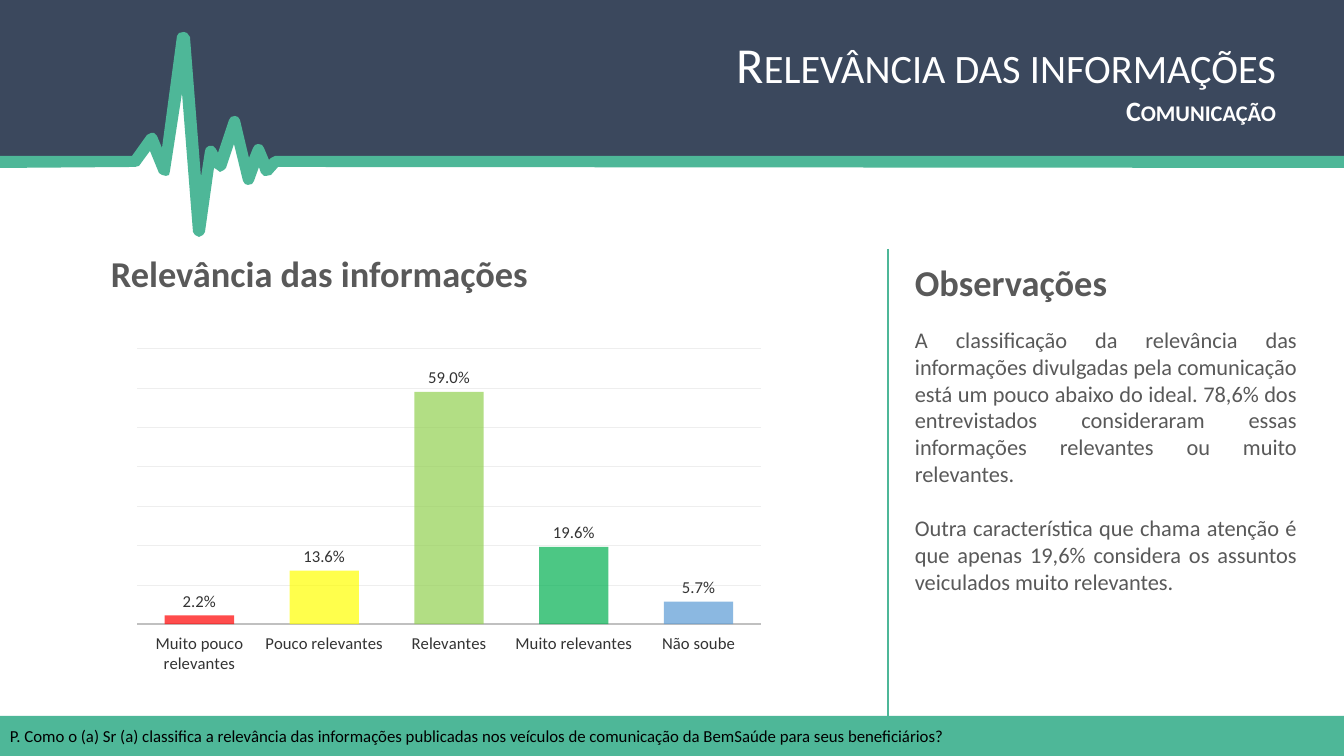
from dataclasses import dataclass

from lxml.etree import SubElement
from pptx import Presentation
from pptx.chart.data import CategoryChartData
from pptx.dml.color import RGBColor
from pptx.enum.chart import XL_CHART_TYPE, XL_LABEL_POSITION, XL_TICK_LABEL_POSITION, XL_TICK_MARK
from pptx.enum.shapes import MSO_CONNECTOR, MSO_SHAPE
from pptx.enum.text import MSO_AUTO_SIZE, PP_ALIGN
from pptx.oxml.ns import qn
from pptx.util import Emu, Pt

WIDTH, HEIGHT = 1344, 756
SCALE = 12192000 / WIDTH


@dataclass(frozen=True)
class Theme:
    """Colours, font and type sizes of the slide."""
    font: str = "Calibri"
    navy: str = "3B485D"
    green: str = "4EB798"
    white: str = "FFFFFF"
    black: str = "000000"
    grey: str = "595959"
    label: str = "333333"
    axis: str = "C0C0C0"
    grid: str = "EEEEEE"
    title: float = 36
    subtitle: float = 20
    heading: float = 26
    body: float = 16
    note: float = 12
    chart: float = 11.9


T = Theme()

BAND = [(1344, 0), (0, 0), (0, 162), (135, 161), (153, 142), (163, 168), (182, 75), (199, 206),
        (210, 156), (220, 166), (233, 127), (248, 177), (260, 154), (267, 170), (277, 161),
        (1344, 162)]
PULSE = [(1344, 156), (275, 156), (271, 158), (269, 160), (264, 148), (262, 145), (258, 144),
         (255, 145), (253, 148), (249, 158), (240, 120), (238, 117), (235, 116), (231, 117),
         (229, 120), (218, 153), (216, 149), (213, 146), (209, 146), (206, 148), (205, 151),
         (201, 177), (190, 37), (187, 33), (184, 32), (179, 33), (177, 36), (162, 148),
         (157, 136), (154, 133), (151, 133), (147, 135), (132, 156), (0, 156), (0, 168),
         (135, 167), (139, 166), (150, 151), (159, 173), (162, 175), (166, 176), (169, 175),
         (170, 171), (182, 93), (193, 232), (195, 235), (199, 237), (203, 235), (205, 232),
         (214, 168), (216, 169), (220, 172), (224, 170), (226, 168), (234, 144), (243, 181),
         (245, 184), (248, 185), (252, 184), (254, 181), (259, 167), (261, 173), (264, 176),
         (266, 176), (271, 175), (278, 167), (1344, 168)]

RATINGS = [("Muito pouco relevantes", 0.022, "FF0000"), ("Pouco relevantes", 0.136, "FFFF00"),
           ("Relevantes", 0.59, "92D050"), ("Muito relevantes", 0.196, "00B050"),
           ("Não soube", 0.057, "5B9BD5")]
OBSERVATIONS = [
    "A classificação da relevância das informações divulgadas pela comunicação está um pouco "
    "abaixo do ideal. 78,6% dos entrevistados consideraram essas informações relevantes ou muito "
    "relevantes.",
    "Outra característica que chama atenção é que apenas 19,6% considera os assuntos veiculados "
    "muito relevantes.",
]
QUESTION = ("P. Como o (a) Sr (a) classifica a relevância das informações publicadas nos veículos "
            "de comunicação da BemSaúde para seus beneficiários?")


def px(n):
    """Turn pixels into EMU."""
    return Emu(round(n * SCALE))


def rgb(color):
    """Turn a hex string into a colour."""
    return RGBColor.from_string(color)


def paint(sp, color):
    """Give a shape a plain fill without line or shadow."""
    sp.shadow.inherit = False
    sp.fill.solid()
    sp.fill.fore_color.rgb = rgb(color)
    sp.line.fill.background()


def style(font, size, color, bold=False):
    """Set the theme font with a size and colour."""
    font.name, font.size, font.bold = T.font, Pt(size), bold
    font.color.rgb = rgb(color)


def add_text(s, box, lines, color, align=PP_ALIGN.LEFT, gap=0, small_caps=False):
    """Add a text box with one paragraph per (text, size, bold) line."""
    tf = s.shapes.add_textbox(*map(px, box)).text_frame
    tf.word_wrap = True
    tf.auto_size = MSO_AUTO_SIZE.SHAPE_TO_FIT_TEXT
    for i, (text, size, bold) in enumerate(lines):
        p = tf.add_paragraph() if i else tf.paragraphs[0]
        p.text, p.alignment = text, align
        if i and gap:
            p.space_before = Pt(gap)
        style(p.font, size, color, bold)
        if small_caps:
            p.font._element.set("cap", "small")


def add_outline(s, x, y, points, color):
    """Add a closed filled outline at an offset."""
    moved = [(x + dx, y + dy) for dx, dy in points]
    builder = s.shapes.build_freeform(*moved[0], scale=SCALE)
    builder.add_line_segments(moved[1:], close=True)
    paint(builder.convert_to_shape(), color)


def add_header(s, x, y, w):
    """Draw the banner with its pulse line and titles."""
    add_outline(s, x, y, BAND, T.navy)
    add_outline(s, x, y, PULSE, T.green)
    add_text(s, (x + 248, y + 28, w - 306, 105),
             [("Relevância das informações", T.title, False), ("Comunicação", T.subtitle, True)],
             T.white, PP_ALIGN.RIGHT, small_caps=True)


def add_footer(s, x, y, w, h):
    """Draw the bottom bar with the survey question."""
    paint(s.shapes.add_shape(MSO_SHAPE.RECTANGLE, *map(px, (x, y, w, h))), T.green)
    add_text(s, (x, y + 5, w, 30), [(QUESTION, T.note, False)], T.black)


def add_observations(s, x, y, w, h):
    """Draw the divider, heading and comments."""
    line = s.shapes.add_connector(MSO_CONNECTOR.STRAIGHT, px(x), px(y), px(x), px(y + h))
    line.line.color.rgb, line.line.width = rgb(T.green), Pt(1)
    SubElement(line._element.spPr, qn("a:effectLst"))
    add_text(s, (x + 17, y + 6, w - 17, 54), [("Observações", T.heading, True)], T.grey)
    add_text(s, (x + 17, y + 72, w - 37, 281), [(text, T.body, False) for text in OBSERVATIONS],
             T.grey, PP_ALIGN.JUSTIFY, gap=19.5)


def add_ratings(s, x, y, w, h):
    """Draw the heading and the column chart below it."""
    add_text(s, (x, y, w, 54), [("Relevância das informações", T.heading, True)], T.grey)
    names, values, colors = zip(*RATINGS)
    data = CategoryChartData(number_format="0.0%")
    data.categories = names
    data.add_series("Series 1", values)
    box = map(px, (x + 23, y + 96, w - 48, h - 96))
    chart = s.shapes.add_chart(XL_CHART_TYPE.COLUMN_CLUSTERED, *box, data).chart
    chart.has_legend = chart.has_title = False
    style(chart.font, T.chart, T.label)
    style_axes(chart)
    plot = chart.plots[0]
    plot.gap_width, plot.overlap, plot.vary_by_categories = 80, 25, False
    plot.has_data_labels = True
    labels = plot.data_labels
    labels.show_value, labels.position = True, XL_LABEL_POSITION.OUTSIDE_END
    labels.number_format, labels.number_format_is_linked = "0.0%", False
    style(labels.font, T.chart, T.label)
    for i, color in enumerate(colors):
        fill = plot.series[0].points[i].format.fill
        fill.solid()
        fill.fore_color.rgb = rgb(color)
        tint = fill._xPr.find(qn("a:solidFill"))[0]
        SubElement(tint, qn("a:alpha"), val="70000")


def style_axes(chart):
    """Style both axes and fix the inner plot area."""
    cat, val = chart.category_axis, chart.value_axis
    cat.major_tick_mark = XL_TICK_MARK.NONE
    cat.tick_label_position = XL_TICK_LABEL_POSITION.LOW
    cat.format.line.color.rgb, cat.format.line.width = rgb(T.axis), Pt(1)
    style(cat.tick_labels.font, T.chart, T.label)
    val.visible = False
    val.minimum_scale, val.maximum_scale, val.major_unit = 0, 0.7, 0.1
    grid = val.major_gridlines.format.line
    grid.color.rgb, grid.width = rgb(T.grid), Pt(0.25)
    area = chart._chartSpace.find(f".//{qn('c:plotArea')}")
    layout = area.find(qn("c:layout"))
    if layout is None:
        layout = SubElement(area, qn("c:layout"))
        area.insert(0, layout)
    manual = SubElement(layout, qn("c:manualLayout"))
    for tag, value in (("layoutTarget", "inner"), ("xMode", "edge"), ("yMode", "edge"),
                       ("x", "0.02"), ("y", "0.02"), ("w", "0.96"), ("h", "0.83")):
        SubElement(manual, qn(f"c:{tag}"), val=value)


def main():
    """Build the slide and save it."""
    prs = Presentation()
    prs.slide_width, prs.slide_height = px(WIDTH), px(HEIGHT)
    s = prs.slides.add_slide(prs.slide_layouts[6])
    add_header(s, 0, 0, WIDTH)
    add_footer(s, 0, 716, WIDTH, 40)
    add_observations(s, 888, 249, 439, 472)
    add_ratings(s, 101, 246, 698, 428)
    prs.save("out.pptx")


if __name__ == "__main__":
    main()
